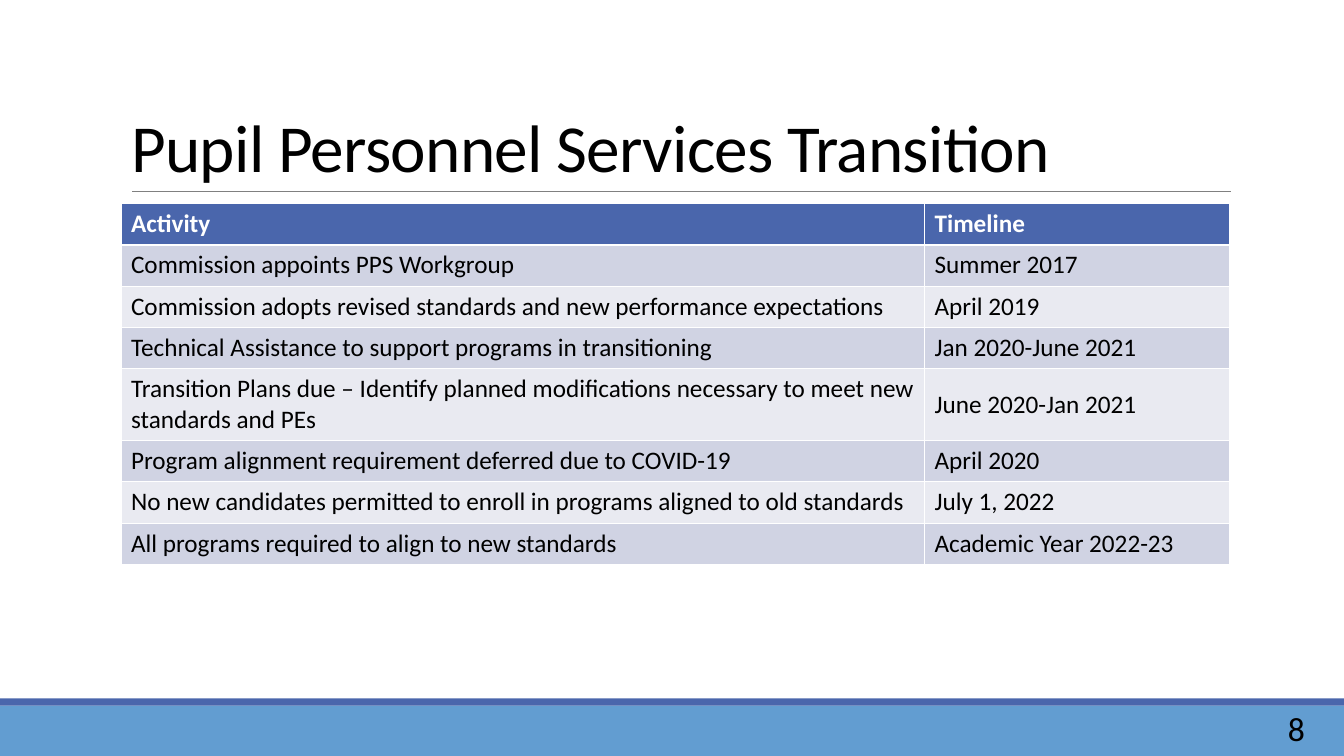
from lxml.etree import SubElement
from pptx import Presentation
from pptx.dml.color import RGBColor
from pptx.enum.shapes import MSO_CONNECTOR as Connector, MSO_SHAPE as Shape
from pptx.enum.text import MSO_ANCHOR as Anchor, MSO_AUTO_SIZE as AutoSize, PP_ALIGN as Align
from pptx.oxml.ns import qn
from pptx.util import Inches, Pt

COLORS = {
    "text": "000000",
    "white": "FFFFFF",
    "accent": "4A66AC",
    "footer": "629DD1",
    "rule": "808080",
    "odd_row": "D0D3E3",
    "even_row": "E9EAF1",
}
FONT = "Calibri"
ROW_HEIGHT = 0.41
COLUMN_WIDTHS = (7.97, 3.03)
HEADER = ("Activity", "Timeline")
MILESTONES = [
    ("Commission appoints PPS Workgroup", "Summer 2017"),
    ("Commission adopts revised standards and new performance expectations", "April 2019"),
    ("Technical Assistance to support programs in transitioning", "Jan 2020-June 2021"),
    ("Transition Plans due – Identify planned modifications necessary to meet "
     "new standards and PEs", "June 2020-Jan 2021"),
    ("Program alignment requirement deferred due to COVID-19", "April 2020"),
    ("No new candidates permitted to enroll in programs aligned to old standards", "July 1, 2022"),
    ("All programs required to align to new standards", "Academic Year 2022-23"),
]


def color(name):
    """Return the named colour of the palette."""
    return RGBColor.from_string(COLORS[name])


def write_text(frame, text, size=18, fill="text", bold=False, align=Align.LEFT,
               line_spacing=None, letter_spacing=None):
    """Write one formatted paragraph into a text frame."""
    frame.word_wrap = True
    paragraph = frame.paragraphs[0]
    paragraph.alignment = align
    if line_spacing is not None:
        paragraph.line_spacing = line_spacing
    run = paragraph.add_run()
    run.text = text
    run.font.name = FONT
    run.font.size = Pt(size)
    run.font.bold = bold
    run.font.color.rgb = color(fill)
    if letter_spacing is not None:
        run.font._element.set("spc", str(round(letter_spacing * 100)))


def add_bar(slide, top, height, fill):
    """Add a flat bar across the full slide width."""
    bar = slide.shapes.add_shape(Shape.RECTANGLE, 0, Inches(top), Inches(13.33), Inches(height))
    bar.shadow.inherit = False
    bar.fill.solid()
    bar.fill.fore_color.rgb = color(fill)
    bar.line.fill.background()


def add_rule(slide, left, right, top):
    """Add the thin horizontal line below the title."""
    rule = slide.shapes.add_connector(
        Connector.STRAIGHT, Inches(left), Inches(top), Inches(right), Inches(top))
    rule.line.color.rgb = color("rule")
    rule.line.width = Pt(0.5)
    SubElement(rule._element.spPr, qn("a:effectLst"))


def set_title(slide, text):
    """Place and fill the title placeholder."""
    title = slide.shapes.title
    title.left, title.top = Inches(1.2), Inches(0.31)
    title.width, title.height = Inches(11), Inches(1.59)
    frame = title.text_frame
    frame.auto_size = AutoSize.NONE
    frame.vertical_anchor = Anchor.BOTTOM
    write_text(frame, text, size=48, line_spacing=0.85, letter_spacing=-0.5)


def add_timeline_table(slide):
    """Add the table of activities and dates with alternating row fills."""
    rows = [HEADER, *MILESTONES]
    table = slide.shapes.add_table(
        len(rows), len(HEADER), Inches(1.2), Inches(2.02),
        Inches(sum(COLUMN_WIDTHS)), Inches(ROW_HEIGHT * len(rows))).table
    for column, width in zip(table.columns, COLUMN_WIDTHS):
        column.width = Inches(width)
    for row_index, row in enumerate(rows):
        table.rows[row_index].height = Inches(ROW_HEIGHT)
        is_header = row_index == 0
        fill = "accent" if is_header else "odd_row" if row_index % 2 else "even_row"
        for column_index, text in enumerate(row):
            cell = table.cell(row_index, column_index)
            cell.fill.solid()
            cell.fill.fore_color.rgb = color(fill)
            write_text(cell.text_frame, text, bold=is_header,
                       fill="white" if is_header else "text")
            if text == "June 2020-Jan 2021":
                cell.vertical_anchor = Anchor.MIDDLE


def add_page_number(slide, number):
    """Add the page number at the right of the footer bar."""
    box = slide.shapes.add_textbox(Inches(11.61), Inches(7.02), Inches(1.43), Inches(0.4))
    box.text_frame.vertical_anchor = Anchor.MIDDLE
    write_text(box.text_frame, number, size=24, align=Align.RIGHT)


def main():
    """Build the slide and save it."""
    presentation = Presentation()
    presentation.slide_width = Inches(13.33)
    presentation.slide_height = Inches(7.5)
    slide = presentation.slides.add_slide(presentation.slide_layouts[5])
    add_bar(slide, 7, 0.5, "footer")
    add_bar(slide, 6.93, 0.07, "accent")
    add_rule(slide, 1.31, 12.21, 1.9)
    set_title(slide, "Pupil Personnel Services Transition")
    add_timeline_table(slide)
    add_page_number(slide, "8")
    presentation.save("out.pptx")


if __name__ == "__main__":
    main()
